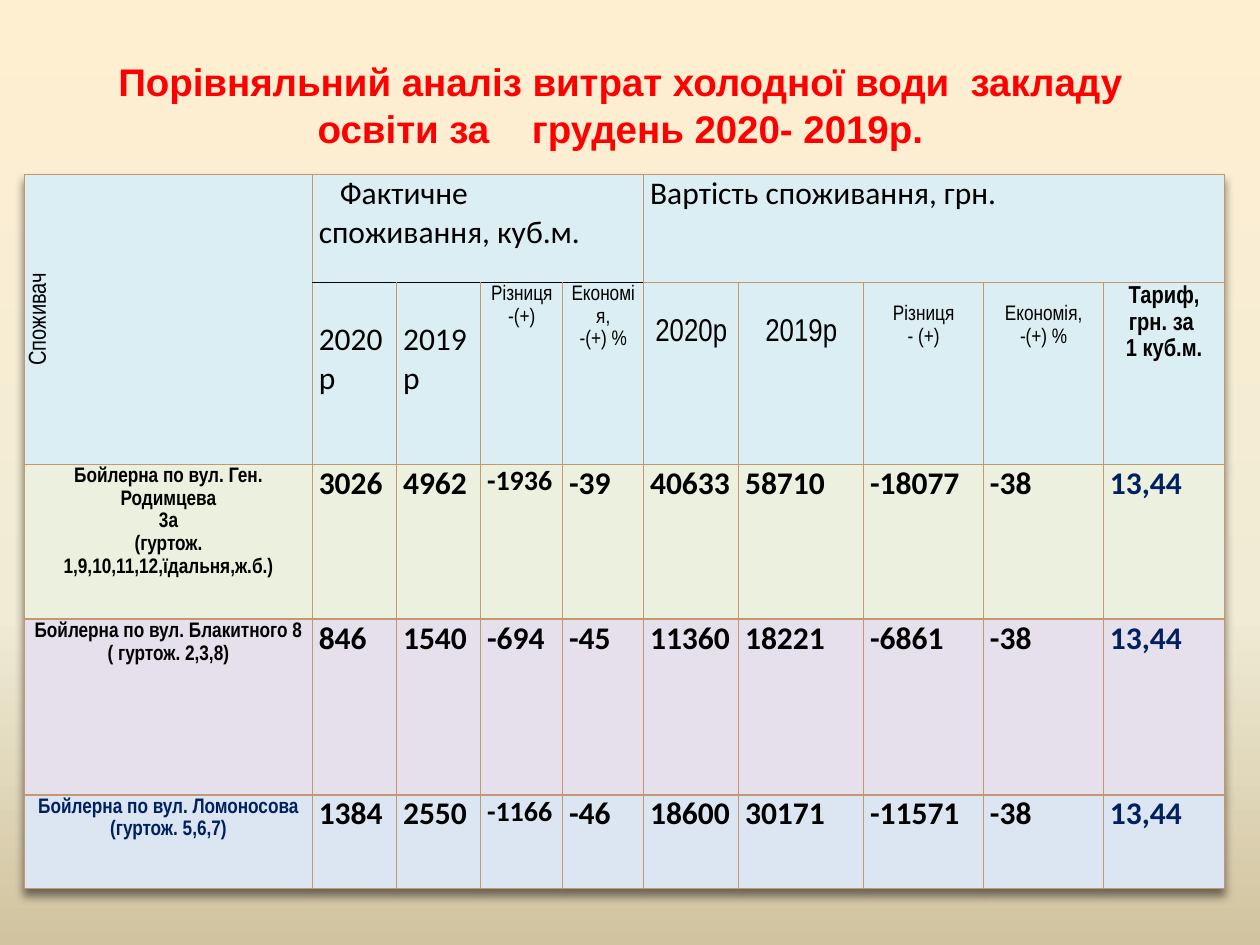
from copy import deepcopy
from dataclasses import dataclass

from lxml import etree
from pptx import Presentation
from pptx.dml.color import RGBColor
from pptx.enum import text
from pptx.oxml import ns
from pptx.util import Pt


@dataclass(frozen=True)
class Theme:
    background: tuple = ((0, "FFEFD1"), (0.65, "F0EBD5"), (1, "D1C39F"))
    title: str = "FF0000"
    ink: str = "000000"
    navy: str = "002060"
    border: str = "C3986D"
    header: str = "DBEEF4"
    bands: tuple = ("EBF1DE", "E6E0EC", "DCE6F2")
    title_font: str = "Arial"
    label_font: str = "Arial Narrow"
    value_font: str = "Calibri"
    title_size: int = 22
    large: int = 18
    compact: int = 16
    medium: int = 14
    small: int = 12


THEME = Theme()
COLUMNS = (164.57, 48.2, 48, 46.86, 46.29, 54.29, 71.43, 68.57, 68.57, 69.14)
ROWS = (61.5, 104, 88.5, 100.5, 53.5)
DIFFERENCE, TARIFF = 3, 9  # columns with their own formatting

CONSUMERS = (
    ("Бойлерна по вул. Ген. Родимцева\n3а\n(гуртож. 1,9,10,11,12,їдальня,ж.б.)",
     "3026", "4962", "-1936", "-39", "40633", "58710", "-18077", "-38", "13,44"),
    ("Бойлерна по вул. Блакитного 8\n( гуртож. 2,3,8)",
     "846", "1540", "-694", "-45", "11360", "18221", "-6861", "-38", "13,44"),
    ("Бойлерна по вул. Ломоносова\n(гуртож. 5,6,7)",
     "1384", "2550", "-1166", "-46", "18600", "30171", "-11571", "-38", "13,44"),
)


def format_text(frame, font, size, color=THEME.ink, bold=False, align=None, spacing=None):
    for paragraph in frame.paragraphs:
        paragraph.alignment = align
        paragraph.line_spacing = spacing
        for run in paragraph.runs:
            run.font.name, run.font.size, run.font.bold = font, Pt(size), bold
            run.font.color.rgb = RGBColor.from_string(color)


def write_value(cell, words, size=THEME.large, color=THEME.ink, bold=False, top=0):
    cell.text_frame.text = words
    cell.margin_top = Pt(top)
    format_text(cell.text_frame, THEME.value_font, size, color, bold)


def write_label(cell, words, size=THEME.small, color=THEME.ink, bold=False, top=0):
    cell.text_frame.text = words
    cell.margin_top = Pt(top)
    format_text(cell.text_frame, THEME.label_font, size, color, bold,
                text.PP_ALIGN.CENTER, 1.15)


def style_cell(cell, fill, edges):
    """Set insets, the four borders and the fill; edges maps side to (colour, width)."""
    cell.margin_left = cell.margin_right = Pt(3.6)
    cell.margin_top = cell.margin_bottom = 0
    properties = cell._tc.get_or_add_tcPr()
    for side in "LRTB":
        color, width = edges.get(side, (THEME.border, 0.79))
        line = etree.SubElement(properties, ns.qn(f"a:ln{side}"), w=str(Pt(width)))
        solid = etree.SubElement(line, ns.qn("a:solidFill"))
        etree.SubElement(solid, ns.qn("a:srgbClr"), val=color)
    cell.fill.solid()
    cell.fill.fore_color.rgb = RGBColor.from_string(fill)


def add_table_shadow(table):
    effects = etree.SubElement(table._tbl.tblPr, ns.qn("a:effectLst"))
    table._tbl.tblPr.insert(0, effects)
    shadow = etree.SubElement(effects, ns.qn("a:outerShdw"), blurRad=str(Pt(5)),
                              dist=str(Pt(4)), dir="5400000", rotWithShape="0")
    color = etree.SubElement(shadow, ns.qn("a:srgbClr"), val=THEME.ink)
    etree.SubElement(color, ns.qn("a:alpha"), val="50000")


def paint_background(slide):
    fill = slide.background.fill
    fill.gradient()
    fill.gradient_angle = 270
    stops = slide.element.find(".//" + ns.qn("a:gsLst"))
    stops.append(deepcopy(stops[-1]))
    for stop, (position, color) in zip(fill.gradient_stops, THEME.background):
        stop.position = position
        stop.color.rgb = RGBColor.from_string(color)


def place_title(slide, left, top, width, height):
    title = slide.shapes.title
    title.left, title.top, title.width, title.height = map(Pt, (left, top, width, height))
    frame = title.text_frame
    frame.text = "Порівняльний аналіз витрат холодної води  закладу освіти за    грудень 2020- 2019р."
    frame.word_wrap = True
    frame.auto_size = text.MSO_AUTO_SIZE.NONE
    frame.vertical_anchor = text.MSO_ANCHOR.MIDDLE
    frame.margin_bottom = Pt(30)  # lifts the lines above the table
    # Keeps the month with the preposition before it
    frame.margin_right = Pt(20)
    frame.margin_left = Pt(20)
    format_text(frame, THEME.title_font, THEME.title_size, THEME.title, True,
                text.PP_ALIGN.CENTER)


def fill_header(table):
    # Group headings
    consumer, usage, cost = (table.cell(0, column) for column in (0, 1, 5))
    consumer.merge(table.cell(1, 0))
    usage.merge(table.cell(0, 4))
    cost.merge(table.cell(0, 9))
    write_label(consumer, "Споживач", THEME.medium)
    consumer.vertical_anchor = text.MSO_ANCHOR.MIDDLE
    consumer._tc.get_or_add_tcPr().set("vert", "vert270")
    write_value(usage, "Фактичне споживання, куб.м.")
    usage.text_frame.paragraphs[0]._p.get_or_add_pPr().set("indent", str(Pt(12)))
    write_value(cost, "Вартість споживання, грн.")

    # Column headings
    for offset, year in enumerate(("2020р", "2019р")):
        write_value(table.cell(1, 1 + offset), year, top=22)
        write_label(table.cell(1, 5 + offset), year, THEME.large, top=18)
    write_label(table.cell(1, 3), "Різниця\n-(+)")
    write_label(table.cell(1, 7), "Різниця\n- (+)", top=11.5)
    for column, top in ((4, 0), (8, 11.5)):
        write_label(table.cell(1, column), "Економія,\n-(+) %", top=top)
    write_label(table.cell(1, TARIFF), "Тариф,\nгрн. за \n1 куб.м.", THEME.medium, bold=True)


def fill_consumers(table):
    for row, (consumer, *values) in enumerate(CONSUMERS, 2):
        label_color = THEME.navy if row == len(ROWS) - 1 else THEME.ink
        write_label(table.cell(row, 0), consumer, color=label_color, bold=True)
        for column, value in enumerate(values, 1):
            tight = column == DIFFERENCE and len(value) > 4
            write_value(table.cell(row, column), value,
                        THEME.compact if tight else THEME.large,
                        THEME.navy if column == TARIFF else THEME.ink, True)


def place_table(slide, left, top):
    frame = slide.shapes.add_table(len(ROWS), len(COLUMNS), Pt(left), Pt(top),
                                   Pt(sum(COLUMNS)), Pt(sum(ROWS)))
    table = frame.table
    table.first_row = table.horz_banding = False
    for column, width in zip(table.columns, COLUMNS):
        column.width = Pt(width)
    for row, height in zip(table.rows, ROWS):
        row.height = Pt(height)

    fills = (THEME.header, THEME.header) + THEME.bands
    for row, fill in enumerate(fills):
        for column in range(len(COLUMNS)):
            # A black rule parts the usage heading from its columns
            edge = {0: "B", 1: "T"}.get(row) if 1 <= column <= 4 else None
            style_cell(table.cell(row, column), fill, {edge: (THEME.ink, 1)})
    add_table_shadow(table)
    fill_header(table)
    fill_consumers(table)


def main():
    deck = Presentation()
    deck.slide_width, deck.slide_height = Pt(720), Pt(540)
    slide = deck.slides.add_slide(deck.slide_layouts[5])
    paint_background(slide)
    place_title(slide, 14.4, 15, 680.4, 116)
    place_table(slide, 14, 99.8)
    deck.save("out.pptx")


if __name__ == "__main__":
    main()
